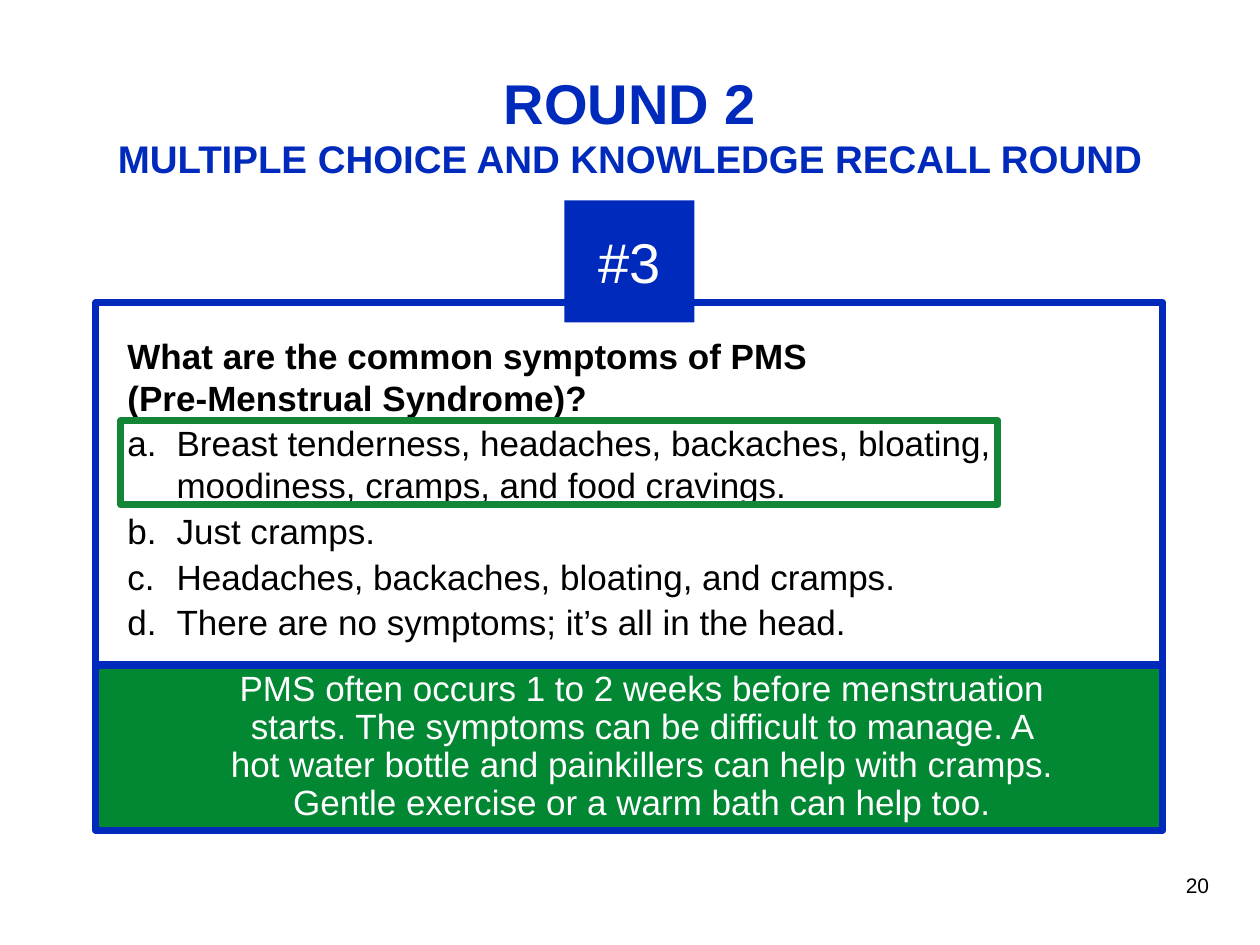
from pptx import Presentation
from pptx.dml.color import RGBColor
from pptx.enum.shapes import MSO_SHAPE
from pptx.enum.text import MSO_ANCHOR, MSO_AUTO_SIZE as AutoSize, PP_ALIGN
from pptx.oxml.ns import qn
from pptx.util import Cm, Pt
from lxml import etree

COLORS = {"blue": "002ABB", "green": "028732", "highlight": "128636",
          "white": "FFFFFF", "black": "000000"}
INSET = 0.13
HANGING = 0.99
TITLE = [("ROUND 2", 32), ("MULTIPLE CHOICE AND KNOWLEDGE RECALL ROUND", 22)]
QUESTION = "What are the common symptoms of PMS\n(Pre-Menstrual Syndrome)?"
CHOICES = [
    "Breast tenderness, headaches, backaches, bloating,\n"
    "moodiness, cramps, and food cravings.",
    "Just cramps.",
    "Headaches, backaches, bloating, and cramps.",
    "There are no symptoms; it’s all in the head.",
]
EXPLANATION = (
    "PMS often occurs 1 to 2 weeks before menstruation starts. "
    "The symptoms can be difficult to manage. "
    "A hot water bottle and painkillers can help with cramps. "
    "Gentle exercise or a warm bath can help too."
)


def rgb(name):
    return RGBColor.from_string(COLORS[name])


def write(paragraph, text, size=20, color="black", bold=False,
          align=PP_ALIGN.LEFT, after=0, spacing=None):
    """Append text to a paragraph; each newline becomes a line break."""
    paragraph.alignment = align
    paragraph.space_after = Pt(after)
    if spacing:
        paragraph.line_spacing = spacing
    for number, line in enumerate(text.split("\n")):
        if number:
            paragraph.add_line_break()
        run = paragraph.add_run()
        run.text = line
        font = run.font
        font.name, font.size, font.bold = "Arial", Pt(size), bold
        font.color.rgb = rgb(color)


def prepare(frame, anchor=MSO_ANCHOR.TOP, fit=AutoSize.NONE):
    frame.word_wrap = True
    frame.auto_size = fit
    frame.vertical_anchor = anchor
    frame.margin_left = frame.margin_right = Cm(INSET)
    frame.margin_top = frame.margin_bottom = Cm(INSET)
    return frame


def add_text_box(slide, box, **layout):
    return prepare(slide.shapes.add_textbox(*map(Cm, box)).text_frame, **layout)


def add_panel(slide, box, fill=None, line=None):
    panel = slide.shapes.add_shape(MSO_SHAPE.RECTANGLE, *map(Cm, box))
    panel.shadow.inherit = False
    if fill:
        panel.fill.solid()
        panel.fill.fore_color.rgb = rgb(fill)
    else:
        panel.fill.background()
    if line:
        panel.line.color.rgb = rgb(line)
        panel.line.width = Pt(4)
    else:
        panel.line.fill.background()
    return panel


def letter(paragraph):
    """Number a paragraph a., b., c. with a hanging indent."""
    properties = paragraph._p.get_or_add_pPr()
    properties.set("marL", str(Cm(HANGING)))
    properties.set("indent", str(-Cm(HANGING)))
    etree.SubElement(properties, qn("a:buFont"), typeface="Arial")
    etree.SubElement(properties, qn("a:buAutoNum"), type="alphaLcPeriod")


def add_title(slide, box):
    title = slide.shapes.title
    title.left, title.top, title.width, title.height = map(Cm, box)
    paragraph = prepare(title.text_frame, anchor=MSO_ANCHOR.MIDDLE).paragraphs[0]
    for number, (line, size) in enumerate(TITLE):
        if number:
            paragraph.add_line_break()
        write(paragraph, line, size=size, color="blue", bold=True,
              align=PP_ALIGN.CENTER)


def add_question(slide, box):
    left, top, width, height = box
    pad = 0.51
    add_panel(slide, box, fill="white", line="blue")
    frame = add_text_box(
        slide, (left + pad, top + pad, width - pad, height - 1.5 * pad),
        fit=AutoSize.SHAPE_TO_FIT_TEXT)
    write(frame.paragraphs[0], QUESTION, bold=True, after=2)
    for choice in CHOICES:
        paragraph = frame.add_paragraph()
        write(paragraph, choice, after=2)
        letter(paragraph)


def add_badge(slide, box):
    badge = add_panel(slide, box, fill="blue")
    frame = prepare(badge.text_frame, anchor=MSO_ANCHOR.MIDDLE)
    write(frame.paragraphs[0], "#3", size=32, color="white",
          align=PP_ALIGN.CENTER)


def add_explanation(slide, box):
    left, top, _, height = box
    add_panel(slide, box, fill="green", line="blue")
    frame = add_text_box(slide, (left + 2.44, top, 17.15, height),
                         fit=AutoSize.SHAPE_TO_FIT_TEXT)
    write(frame.paragraphs[0], EXPLANATION, color="white",
          align=PP_ALIGN.CENTER, spacing=0.9)


def add_page_number(slide, box):
    frame = add_text_box(slide, box, anchor=MSO_ANCHOR.MIDDLE)
    write(frame.paragraphs[0], "20", size=12, align=PP_ALIGN.CENTER)


def main():
    deck = Presentation()
    deck.slide_width, deck.slide_height = Cm(25.4), Cm(19.05)
    slide = deck.slides.add_slide(deck.slide_layouts.get_by_name("Title Only"))
    left, width = 1.93, 21.51
    add_title(slide, (1.27, 0.94, 22.86, 3.15))
    add_question(slide, (left, 6.1, width, 7.29))
    add_badge(slide, (11.38, 4.04, 2.62, 2.46))
    add_page_number(slide, (22.91, 17.15, 2.46, 1.4))
    add_explanation(slide, (left, 13.41, width, 3.33))
    add_panel(slide, (left + 0.51, 8.48, 17.68, 1.7), line="highlight")
    deck.save("out.pptx")


if __name__ == "__main__":
    main()
